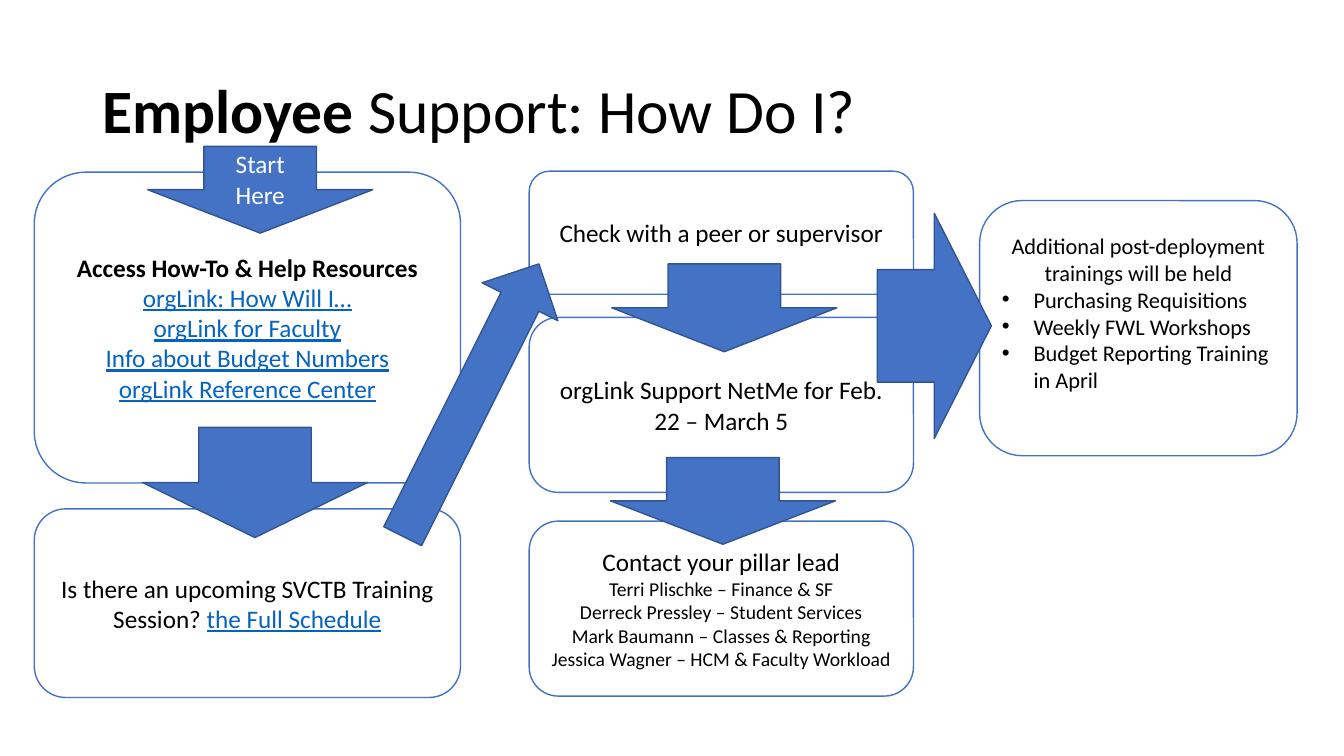
import pptx
import pptx.dml.color
import pptx.enum.shapes
import pptx.enum.text
import pptx.util
import lxml.etree

Pt = pptx.util.Pt
SHAPES = pptx.enum.shapes.MSO_SHAPE
ALIGN = pptx.enum.text.PP_ALIGN
MIDDLE = pptx.enum.text.MSO_ANCHOR.MIDDLE
BLUE, DARK_BLUE, LINK, BLACK, WHITE = "4472C4", "325491", "0563C1", "000000", "FFFFFF"


def color(hex_text):
    return pptx.dml.color.RGBColor.from_string(hex_text)


def write(shape, lines, ink=BLACK, align=ALIGN.CENTER):
    frame = shape.text_frame
    frame.word_wrap = True
    frame.vertical_anchor = MIDDLE
    for index, (size, spans) in enumerate(lines):
        para = frame.add_paragraph() if index else frame.paragraphs[0]
        para.alignment = align
        para.font.name = "Calibri"
        para.font.size = Pt(size)
        para.font.color.rgb = color(ink)
        for text, style in spans:
            span = para.add_run()
            span.text = text
            if style == "bold":
                span.font.bold = True
            elif style == "link":
                span.font.underline = True
                span.font.color.rgb = color(LINK)


deck = pptx.Presentation()
deck.slide_width, deck.slide_height = Pt(960), Pt(540)
slide = deck.slides.add_slide(deck.slide_layouts[6])

title = slide.shapes.add_textbox(Pt(66), Pt(28.75), Pt(828), Pt(104.4))
write(title, [(44, [("Employee", "bold"), (" Support: How Do I?", "plain")])], align=ALIGN.LEFT)
title.text_frame.paragraphs[0].line_spacing = 0.9

resources = ["orgLink: How Will I…", "orgLink for Faculty",
             "Info about Budget Numbers", "orgLink Reference Center"]
leads = ["Terri Plischke – Finance & SF", "Derreck Pressley – Student Services",
         "Mark Baumann – Classes & Reporting", "Jessica Wagner – HCM & Faculty Workload"]
trainings = ["Purchasing Requisitions", "Weekly FWL Workshops", "Budget Reporting Training in April"]

boxes = [
    (24.5, 123, 304.5, 222,
     [(18, [("Access How-To & Help Resources", "bold")])]
     + [(18, [(name, "link")]) for name in resources]),
    (24.5, 363.5, 304.5, 134.75,
     [(18, [("Is there an upcoming SVCTB Training Session? ", "plain"),
            ("the Full Schedule", "link")])]),
    (378, 122.25, 274.5, 88, [(18, [("Check with a peer or supervisor", "plain")])]),
    (378, 226.75, 274.5, 125, [(18, [("orgLink Support NetMe for Feb. 22 – March 5", "plain")])]),
    (378, 372.25, 274.5, 125,
     [(18, [("Contact your pillar lead", "plain")])]
     + [(14, [(lead, "plain")]) for lead in leads]),
    (699.75, 143.25, 226.75, 182.25,
     [(16, [("Additional post-deployment trainings will be held", "plain")])]
     + [(16, [(training, "plain")]) for training in trainings]),
]
for left, top, width, height, lines in boxes:
    box = slide.shapes.add_shape(SHAPES.ROUNDED_RECTANGLE, Pt(left), Pt(top), Pt(width), Pt(height))
    box.shadow.inherit = False
    box.fill.solid()
    box.fill.fore_color.rgb = color(WHITE)
    box.line.color.rgb = color(BLUE)
    box.line.width = Pt(1)
    write(box, lines)

training_box = box
training_box.text_frame.margin_bottom = Pt(25.6)
for para in training_box.text_frame.paragraphs[1:]:
    para.alignment = ALIGN.LEFT
    properties = para._p.get_or_add_pPr()
    properties.set("marL", str(Pt(22.5)))
    properties.set("indent", str(Pt(-22.5)))
    bullet_font = lxml.etree.Element(pptx.oxml.ns.qn("a:buFont"), typeface="Arial")
    bullet = lxml.etree.Element(pptx.oxml.ns.qn("a:buChar"), char="•")
    properties.insert(0, bullet_font)
    properties.insert(1, bullet)

arrows = [
    (105.5, 104.5, 160.75, 62, 0, "Start Here"),
    (101.75, 305.25, 160.75, 78.75, 0, ""),
    (306, 177, 60.5, 217.5, 206.6, ""),
    (437, 188.5, 160.75, 62.75, 0, ""),
    (436, 326.75, 160.75, 62, 0, ""),
    (587, 192, 160.75, 81.5, 270, ""),
]
for left, top, width, height, angle, label in arrows:
    arrow = slide.shapes.add_shape(SHAPES.DOWN_ARROW, Pt(left), Pt(top), Pt(width), Pt(height))
    arrow.rotation = angle
    arrow.shadow.inherit = False
    arrow.fill.solid()
    arrow.fill.fore_color.rgb = color(BLUE)
    arrow.line.color.rgb = color(DARK_BLUE)
    arrow.line.width = Pt(1)
    if label:
        write(arrow, [(18, [(label, "plain")])], WHITE)

deck.save("out.pptx")
